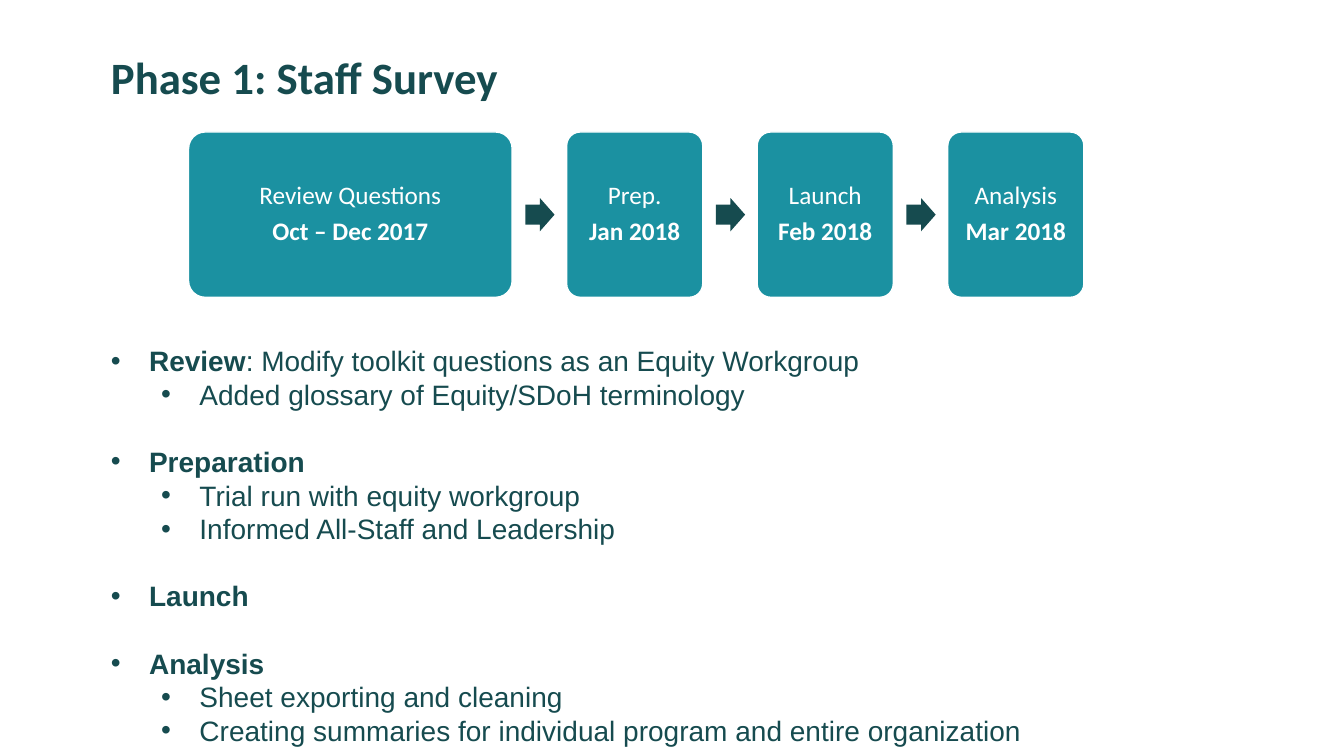
from lxml import etree
from pptx import Presentation
from pptx.dml.color import RGBColor
from pptx.enum import shapes, text
from pptx.oxml import ns
from pptx.util import Inches, Pt

DARK, TEAL, WHITE = "164B4F", "1B91A1", "FFFFFF"
STEPS = [
    ("Review Questions", "Oct – Dec 2017", 3.21),
    ("Prep.", "Jan 2018", 1.35),
    ("Launch", "Feb 2018", 1.35),
    ("Analysis", "Mar 2018", 1.35),
]
TOPICS = [
    ("Review", ": Modify toolkit questions as an Equity Workgroup",
     ["Added glossary of Equity/SDoH terminology"]),
    ("Preparation", "",
     ["Trial run with equity workgroup", "Informed All-Staff and Leadership"]),
    ("Launch", "", []),
    ("Analysis", "",
     ["Sheet exporting and cleaning",
      "Creating summaries for individual program and entire organization"]),
]


def color(value):
    """Turn a hex string into a colour."""
    return RGBColor.from_string(value)


def style(span, size, face, ink, bold=False):
    """Format one run."""
    span.font.size = Pt(size)
    span.font.name = face
    span.font.bold = bold
    span.font.color.rgb = color(ink)


def add_title(page, left, top, width, height):
    """Place the slide title."""
    title = page.shapes.title
    title.left, title.top = Inches(left), Inches(top)
    title.width, title.height = Inches(width), Inches(height)
    frame = title.text_frame
    frame.text = "Phase 1: Staff Survey"
    frame.vertical_anchor = text.MSO_ANCHOR.BOTTOM
    para = frame.paragraphs[0]
    para.alignment = text.PP_ALIGN.LEFT
    para.line_spacing = 0.9
    style(para.runs[0], 32, "Calibri", DARK, True)


def add_block(page, kind, left, top, width, height, fill):
    """Draw a flat filled shape without an outline."""
    block = page.shapes.add_shape(
        kind, Inches(left), Inches(top), Inches(width), Inches(height))
    block.shadow.inherit = False
    block.fill.solid()
    block.fill.fore_color.rgb = color(fill)
    block.line.fill.background()
    return block


def add_step(page, left, top, width, height, name, date):
    """Draw one timeline step with its name and date."""
    box = add_block(page, shapes.MSO_SHAPE.ROUNDED_RECTANGLE,
                    left, top, width, height, TEAL)
    box.adjustments[0] = 0.1
    box.line.color.rgb = color(WHITE)
    box.line.width = Pt(1)
    frame = box.text_frame
    frame.margin_left = frame.margin_right = Inches(0.1)
    frame.vertical_anchor = text.MSO_ANCHOR.MIDDLE
    frame.text = f"{name}\n{date}"
    for para, bold in zip(frame.paragraphs, (False, True)):
        para.alignment = text.PP_ALIGN.CENTER
        para.line_spacing = 0.9
        para.space_after = Pt(6.3)
        style(para.runs[0], 18, "Calibri", WHITE, bold)


def add_timeline(page, left, top, height, gap=0.54):
    """Lay out the steps from left to right with arrows between them."""
    arrow_width, arrow_height = 0.29, 0.33
    for index, (name, date, width) in enumerate(STEPS):
        if index:
            arrow = add_block(page, shapes.MSO_SHAPE.RIGHT_ARROW,
                              left - gap + 0.13, top + (height - arrow_height) / 2,
                              arrow_width, arrow_height, DARK)
            arrow.adjustments[0] = 0.6
        add_step(page, left, top, width, height, name, date)
        left += width + gap


def add_bullet(para, level, lead, rest):
    """Write one bulleted paragraph with a bold lead."""
    para.level = level
    para.line_spacing = Pt(24)
    settings = para._p.get_or_add_pPr()
    settings.set("marL", str(Inches((0.38, 0.88)[level])))
    settings.set("indent", str(Inches(-0.38)))
    etree.SubElement(settings, ns.qn("a:buFont")).set("typeface", "Arial")
    etree.SubElement(settings, ns.qn("a:buChar")).set("char", "•")
    for words, bold in ((lead, True), (rest, False)):
        if words:
            span = para.add_run()
            span.text = words
            style(span, 20, "Arial", DARK, bold)


def add_topics(page, left, top, width, height):
    """Write the topics and their details as a two-level list."""
    box = page.shapes.add_textbox(
        Inches(left), Inches(top), Inches(width), Inches(height))
    frame = box.text_frame
    frame.word_wrap = True
    for index, (lead, rest, details) in enumerate(TOPICS):
        para = frame.add_paragraph() if index else frame.paragraphs[0]
        if index:
            para.space_before = Pt(24)
        add_bullet(para, 0, lead, rest)
        for detail in details:
            add_bullet(frame.add_paragraph(), 1, "", detail)


def main():
    """Build the slide and save it."""
    deck = Presentation()
    deck.slide_width, deck.slide_height = Inches(13.33), Inches(7.5)
    page = deck.slides.add_slide(deck.slide_layouts[5])
    page.background.fill.solid()
    page.background.fill.fore_color.rgb = color(WHITE)
    add_title(page, 1, 0.04, 9.58, 1.04)
    add_topics(page, 1, 3.36, 11.75, 4.12)
    add_timeline(page, 1.87, 1.31, 1.64)
    deck.save("out.pptx")


if __name__ == "__main__":
    main()
